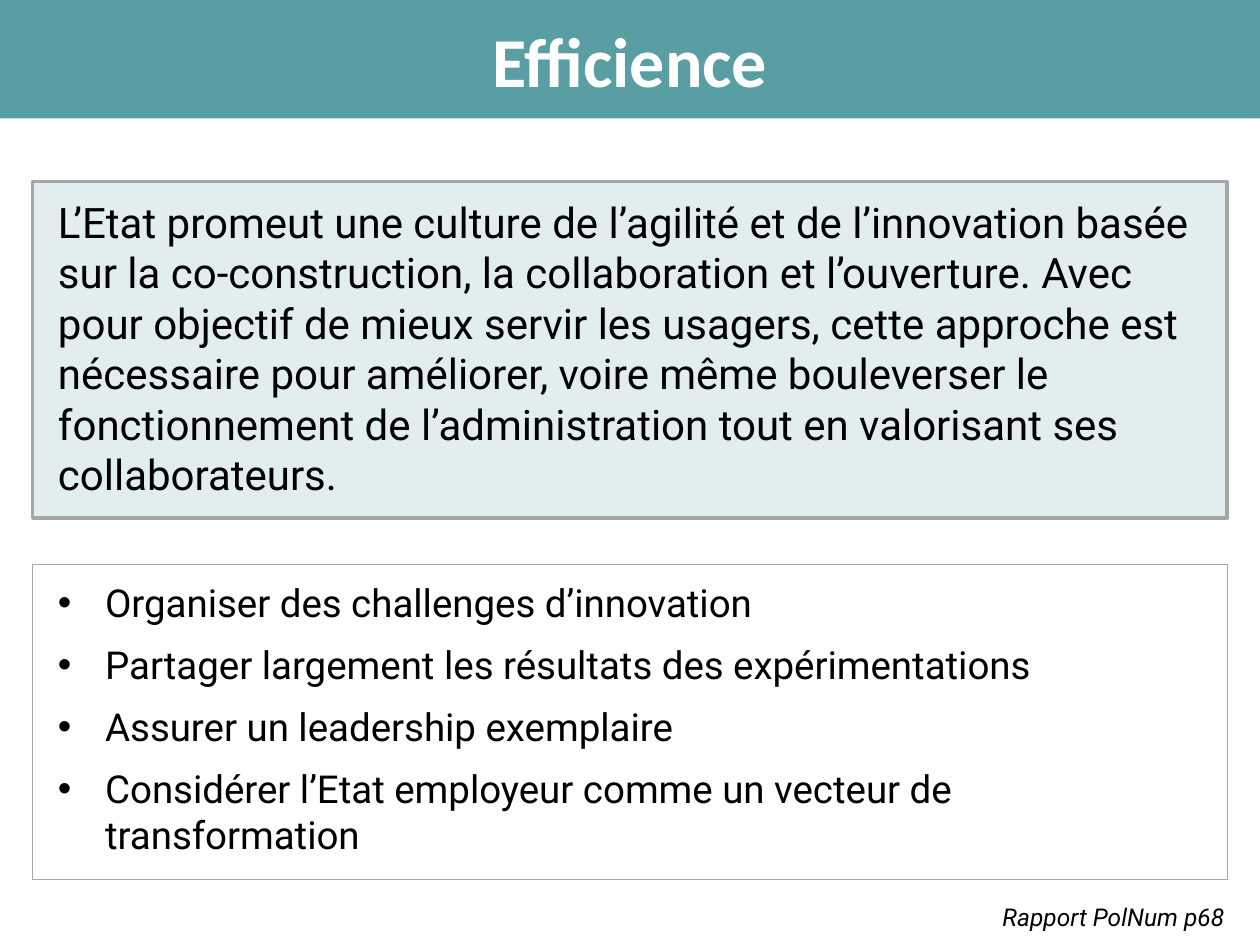
from lxml.etree import SubElement
from pptx import Presentation
from pptx.dml.color import RGBColor as RGB
from pptx.enum.shapes import MSO_SHAPE as Kind
from pptx.enum.text import MSO_ANCHOR as Anchor, PP_ALIGN as Align
from pptx.oxml.ns import qn
from pptx.util import Cm, Pt

TEAL, GREY, BLACK, WHITE = "599EA3", "A6A6A6", "000000", "FFFFFF"
LEFT, WIDE = 0.66, 24.08
PAD = (0.51, 0.3)
INTRO = (
    "L’Etat promeut une culture de l’agilité et de l’innovation basée sur la "
    "co-construction, la collaboration et l’ouverture. Avec pour objectif de mieux "
    "servir les usagers, cette approche est nécessaire pour améliorer, voire même "
    "bouleverser le fonctionnement de l’administration tout en valorisant ses "
    "collaborateurs."
)
GOALS = [
    "Organiser des challenges d’innovation",
    "Partager largement les résultats des expérimentations",
    "Assurer un leadership exemplaire",
    "Considérer l’Etat employeur comme un vecteur de transformation",
]


def paint(color, code):
    """Set a colour format from a hex string."""
    color.rgb = RGB.from_string(code)


def add_bullet(para, indent):
    """Give a paragraph a hanging round bullet."""
    props = para._p.get_or_add_pPr()
    props.set("marL", str(Cm(indent)))
    props.set("indent", str(-Cm(indent)))
    SubElement(props, qn("a:buFont"), typeface="Arial")
    SubElement(props, qn("a:buChar"), char="•")


def write(frame, lines, size, font="Roboto", color=BLACK, bold=False, italic=False,
          align=Align.LEFT, anchor=Anchor.TOP, pad=(0.25, 0.13), wrap=True,
          bullet=False, gap=0):
    """Fill a text frame with one paragraph per line."""
    frame.word_wrap = wrap
    frame.vertical_anchor = anchor
    frame.margin_left = frame.margin_right = Cm(pad[0])
    frame.margin_top = frame.margin_bottom = Cm(pad[1])
    for i, line in enumerate(lines):
        para = frame.add_paragraph() if i else frame.paragraphs[0]
        para.alignment = align
        if i:
            para.space_before = Pt(gap)
        if bullet:
            add_bullet(para, 0.95)
        run = para.add_run()
        run.text = line
        face = run.font
        face.name, face.size = font, Pt(size)
        face.bold, face.italic = bold, italic
        paint(face.color, color)


def add_panel(slide, left, top, width, height, fill=None, alpha=100, line=None, weight=1):
    """Draw a rectangle and return its text frame."""
    panel = slide.shapes.add_shape(
        Kind.RECTANGLE, Cm(left), Cm(top), Cm(width), Cm(height))
    panel.shadow.inherit = False
    if fill:
        panel.fill.solid()
        paint(panel.fill.fore_color, fill)
        if alpha < 100:
            tint = panel.fill._xPr.find(qn("a:solidFill"))[0]
            SubElement(tint, qn("a:alpha"), val=str(alpha * 1000))
    else:
        panel.fill.background()
    if line:
        paint(panel.line.color, line)
        panel.line.width = Pt(weight)
    else:
        panel.line.fill.background()
    return panel.text_frame


def main():
    """Build the slide and save it."""
    deck = Presentation()
    deck.slide_width, deck.slide_height = Cm(25.4), Cm(19.05)
    slide = deck.slides.add_slide(deck.slide_layouts[6])

    title = add_panel(slide, 0, 0, 25.4, 2.39, fill=TEAL)
    write(title, ["Efficience"], 40, font="Calibri", color=WHITE, bold=True,
          align=Align.CENTER, anchor=Anchor.MIDDLE)

    goals = add_panel(slide, LEFT, 11.38, WIDE, 6.35, line=GREY, weight=0.75)
    write(goals, GOALS, 22, pad=PAD, bullet=True, gap=9)

    intro = add_panel(slide, LEFT, 3.66, WIDE, 6.78, fill=TEAL, alpha=18,
                      line=GREY, weight=2)
    write(intro, [INTRO], 24, pad=PAD)

    source = slide.shapes.add_textbox(Cm(19.96), Cm(18.06), Cm(5.11), Cm(0.86))
    write(source.text_frame, ["Rapport PolNum p68"], 14, italic=True, wrap=False)

    deck.save("out.pptx")


if __name__ == "__main__":
    main()
